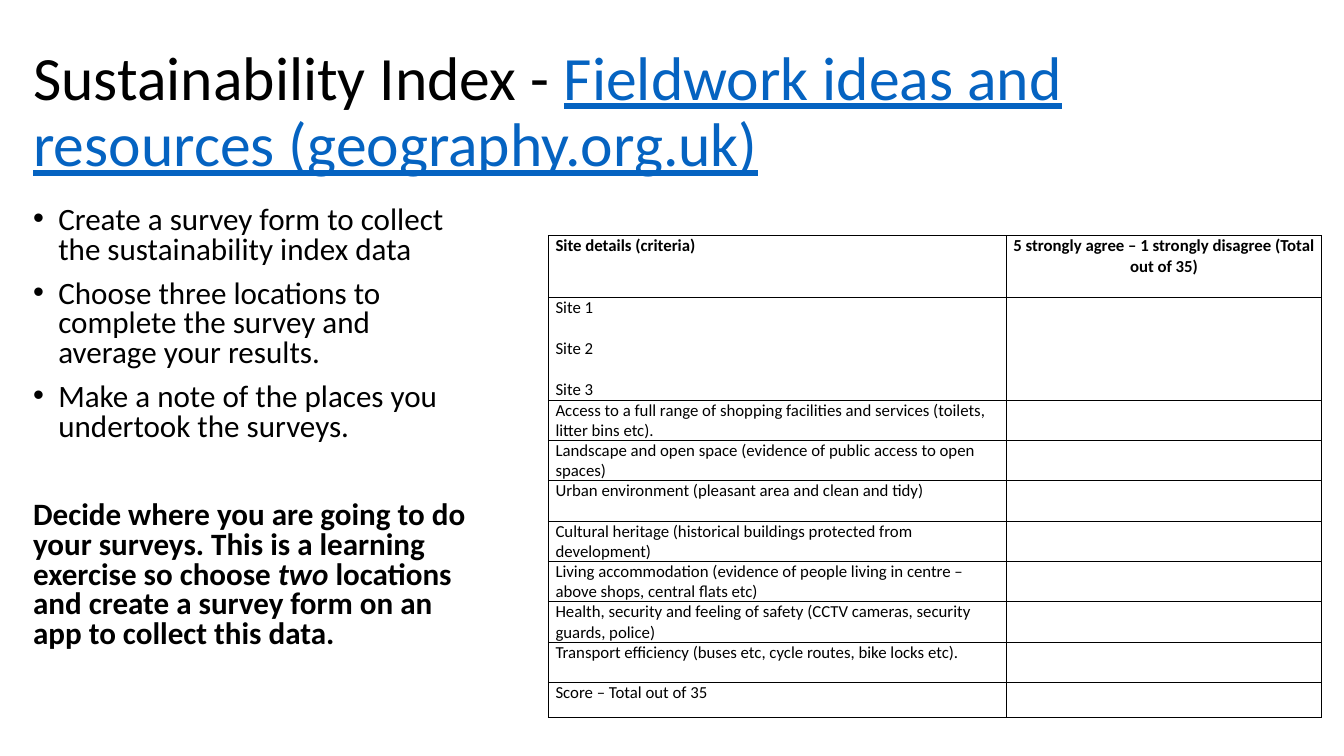
from dataclasses import dataclass

from lxml import etree
from pptx import Presentation
from pptx.dml.color import RGBColor
from pptx.enum.text import MSO_ANCHOR, MSO_AUTO_SIZE, PP_ALIGN
from pptx.oxml.ns import qn
from pptx.util import Emu, Pt

EMU_PER_PX = 9144  # 100 px to the inch
BLACK = RGBColor(0x00, 0x00, 0x00)
LINK_BLUE = RGBColor(0x05, 0x63, 0xC1)
FONT_NAME = "Calibri"
LEFT, CENTER = PP_ALIGN.LEFT, PP_ALIGN.CENTER
MIDDLE = MSO_ANCHOR.MIDDLE
NO_AUTOFIT = MSO_AUTO_SIZE.NONE
TITLE_ONLY_LAYOUT = 5


@dataclass(frozen=True)
class Box:
    left: int
    top: int
    width: int
    height: int

    def emu(self) -> tuple:
        return tuple(px(value) for value in (self.left, self.top, self.width, self.height))


@dataclass(frozen=True)
class TextRun:
    text: str
    bold: bool = False
    italic: bool = False
    underline: bool = False
    color: RGBColor = BLACK


@dataclass(frozen=True)
class TableRow:
    height: int
    criterion: str
    score: str = ""
    bold: bool = False
    line_gap: float = 0


TITLE_BOX = Box(23, 40, 1288, 145)
BODY_BOX = Box(23, 200, 451, 476)
TABLE_BOX = Box(544, 234, 767, 476)
COLUMN_WIDTHS = (454, 313)
CELL_MARGIN = 7
BULLET_INDENT = 25

TITLE_RUNS = (
    TextRun("Sustainability Index - "),
    TextRun("Fieldwork ideas and resources (geography.org.uk)", underline=True, color=LINK_BLUE),
)
INSTRUCTIONS = (
    "Create a survey form to collect the sustainability index data",
    "Choose three locations to complete the survey and average your results.",
    "Make a note of the places you undertook the surveys.",
)
DECISION_RUNS = (
    TextRun("Decide where you are going to do your surveys. This is a learning exercise so choose ", bold=True),
    TextRun("two", bold=True, italic=True),
    TextRun(" locations and create a survey form on an app to collect this data.", bold=True),
)
CRITERIA = (
    "Access to a full range of shopping facilities and services (toilets, litter bins etc).",
    "Landscape and open space (evidence of public access to open spaces)",
    "Urban environment (pleasant area and clean and tidy)",
    "Cultural heritage (historical buildings protected from development)",
    "Living accommodation (evidence of people living in centre – above shops, central flats etc)",
    "Health, security and feeling of safety (CCTV cameras, security guards, police)",
    "Transport efficiency (buses etc, cycle routes, bike locks etc).",
)
TABLE_ROWS = (
    TableRow(61, "Site details (criteria)", "5 strongly agree – 1 strongly disagree (Total out of 35)", bold=True),
    TableRow(102, "Site 1\nSite 2\nSite 3", line_gap=14.65),
    *(TableRow(40, criterion) for criterion in CRITERIA),
    TableRow(35, "Score – Total out of 35"),
)


def px(value: int) -> Emu:
    return Emu(value * EMU_PER_PX)


def add_runs(paragraph, runs: tuple, size: float) -> None:
    for item in runs:
        run = paragraph.add_run()
        run.text = item.text
        font = run.font
        font.name, font.size = FONT_NAME, Pt(size)
        font.bold, font.italic, font.underline = item.bold, item.italic, item.underline
        font.color.rgb = item.color


def add_bullet(paragraph) -> None:
    properties = paragraph._p.get_or_add_pPr()
    properties.set("marL", str(px(BULLET_INDENT)))
    properties.set("indent", str(-px(BULLET_INDENT)))
    etree.SubElement(properties, qn("a:buFont"), typeface="Arial")
    etree.SubElement(properties, qn("a:buChar"), char="•")


def add_borders(cell) -> None:
    properties = cell._tc.get_or_add_tcPr()
    for position, side in enumerate(("a:lnL", "a:lnR", "a:lnT", "a:lnB")):
        line = etree.Element(qn(side), w=str(Pt(1)))
        fill = etree.SubElement(line, qn("a:solidFill"))
        etree.SubElement(fill, qn("a:srgbClr"), val=str(BLACK))
        properties.insert(position, line)


def set_title(slide) -> None:
    title = slide.shapes.title
    title.left, title.top, title.width, title.height = TITLE_BOX.emu()
    frame = title.text_frame
    frame.auto_size, frame.vertical_anchor = NO_AUTOFIT, MIDDLE
    paragraph = frame.paragraphs[0]
    paragraph.alignment, paragraph.line_spacing = LEFT, 0.9
    add_runs(paragraph, TITLE_RUNS, 44)


def add_instructions(slide) -> None:
    frame = slide.shapes.add_textbox(*BODY_BOX.emu()).text_frame
    frame.word_wrap = True
    entries = [(TextRun(text),) for text in INSTRUCTIONS] + [DECISION_RUNS]
    for index, runs in enumerate(entries):
        paragraph = frame.add_paragraph() if index else frame.paragraphs[0]
        is_decision = runs is DECISION_RUNS
        paragraph.line_spacing = 0.8
        paragraph.space_before = Pt(41.5 if is_decision else 10)
        if not is_decision:
            add_bullet(paragraph)
        add_runs(paragraph, runs, 22.2)


def fill_cell(cell, text: str, row: TableRow, alignment: PP_ALIGN) -> None:
    cell.fill.background()
    cell.margin_left = cell.margin_right = px(CELL_MARGIN)
    cell.margin_top = cell.margin_bottom = 0
    add_borders(cell)
    frame = cell.text_frame
    for index, line in enumerate(text.split("\n")):
        paragraph = frame.add_paragraph() if index else frame.paragraphs[0]
        paragraph.alignment = alignment
        paragraph.space_before = Pt(row.line_gap if index else 0)
        if line:
            add_runs(paragraph, (TextRun(line, bold=row.bold),), 12)


def add_score_table(slide) -> None:
    table = slide.shapes.add_table(len(TABLE_ROWS), len(COLUMN_WIDTHS), *TABLE_BOX.emu()).table
    table.first_row = table.horz_banding = False
    for column, width in zip(table.columns, COLUMN_WIDTHS):
        column.width = px(width)
    for index, row in enumerate(TABLE_ROWS):
        table.rows[index].height = px(row.height)
        fill_cell(table.cell(index, 0), row.criterion, row, LEFT)
        fill_cell(table.cell(index, 1), row.score, row, CENTER)


def main() -> None:
    presentation = Presentation()
    presentation.slide_width, presentation.slide_height = px(1333), px(750)
    slide = presentation.slides.add_slide(presentation.slide_layouts[TITLE_ONLY_LAYOUT])
    set_title(slide)
    add_instructions(slide)
    add_score_table(slide)
    presentation.save("out.pptx")


if __name__ == "__main__":
    main()
